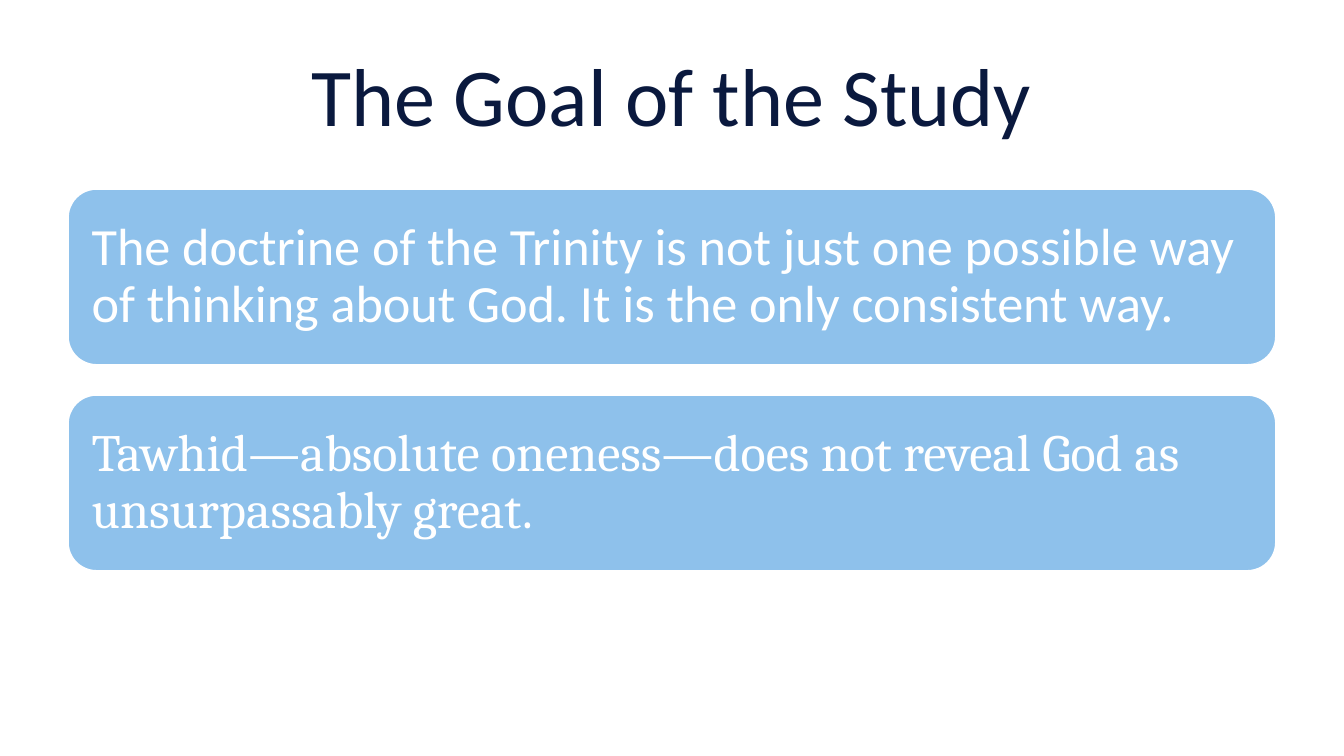
from lxml import etree
from pptx import Presentation
from pptx.dml.color import RGBColor
from pptx.enum.shapes import MSO_SHAPE
from pptx.enum.text import MSO_ANCHOR, MSO_AUTO_SIZE, PP_ALIGN
from pptx.oxml.ns import qn
from pptx.util import Emu, Pt

ROUNDED = MSO_SHAPE.ROUNDED_RECTANGLE
MIDDLE = MSO_ANCHOR.MIDDLE
LEFT, CENTER = PP_ALIGN.LEFT, PP_ALIGN.CENTER
NO_FIT = MSO_AUTO_SIZE.NONE

EMU_PER_PX = 914400 / 134.4
SLIDE_W, SLIDE_H = 1344, 756
MARGIN = 67
CONTENT_W = SLIDE_W - 2 * MARGIN
CARD_TOP, CARD_H, CARD_GAP = 188, 178, 28
COLORS = {"white": "FFFFFF", "navy": "0A193E", "sky": "8EC1EB"}

STATEMENTS = [
    ("The doctrine of the Trinity is not just one possible way of thinking "
     "about God. It is the only consistent way.", "Calibri"),
    ("Tawhid—absolute oneness—does not reveal God as unsurpassably great.",
     "Cambria"),
]


def px(n):
    return Emu(round(n * EMU_PER_PX))


def color(name):
    return RGBColor.from_string(COLORS[name])


def write(tf, text, font="Calibri", size=28, ink="white", align=LEFT,
          line_spacing=None, space_after=None):
    tf.word_wrap = True
    tf.auto_size = NO_FIT
    tf.vertical_anchor = MIDDLE
    p = tf.paragraphs[0]
    p.alignment = align
    p.line_spacing = line_spacing
    p.space_after = space_after
    r = p.add_run()
    r.text = text
    r.font.name = font
    r.font.size = Pt(size)
    r.font.color.rgb = color(ink)


class Deck:
    def __init__(self):
        self.prs = Presentation()
        self.prs.slide_width, self.prs.slide_height = px(SLIDE_W), px(SLIDE_H)
        self.s = self.prs.slides.add_slide(self.prs.slide_layouts[5])
        self.s.background.fill.solid()
        self.s.background.fill.fore_color.rgb = color("white")

    def title(self, text, x, y, w, h):
        sp = self.s.shapes.title
        sp.left, sp.top, sp.width, sp.height = map(px, (x, y, w, h))
        sp.fill.solid()
        sp.fill.fore_color.rgb = color("white")
        rgb = sp.fill._xPr.find(".//" + qn("a:srgbClr"))
        etree.SubElement(rgb, qn("a:alpha")).set("val", "28000")
        write(sp.text_frame, text, size=44, ink="navy", align=CENTER)

    def card(self, text, font, x, y, w, h, inset=16):
        sp = self.s.shapes.add_shape(ROUNDED, *map(px, (x, y, w, h)))
        sp.shadow.inherit = False
        sp.fill.solid()
        sp.fill.fore_color.rgb = color("sky")
        sp.line.color.rgb = color("white")
        sp.line.width = Pt(2)
        tf = sp.text_frame
        tf.margin_left = tf.margin_right = px(inset)
        tf.margin_top = tf.margin_bottom = px(inset)
        write(tf, text, font=font, line_spacing=0.9, space_after=Pt(10))


def main():
    deck = Deck()
    deck.title("The Goal of the Study", MARGIN, 31, CONTENT_W, 126)
    for i, (text, font) in enumerate(STATEMENTS):
        y = CARD_TOP + i * (CARD_H + CARD_GAP)
        deck.card(text, font, MARGIN, y, CONTENT_W, CARD_H)
    deck.prs.save("out.pptx")


if __name__ == "__main__":
    main()
